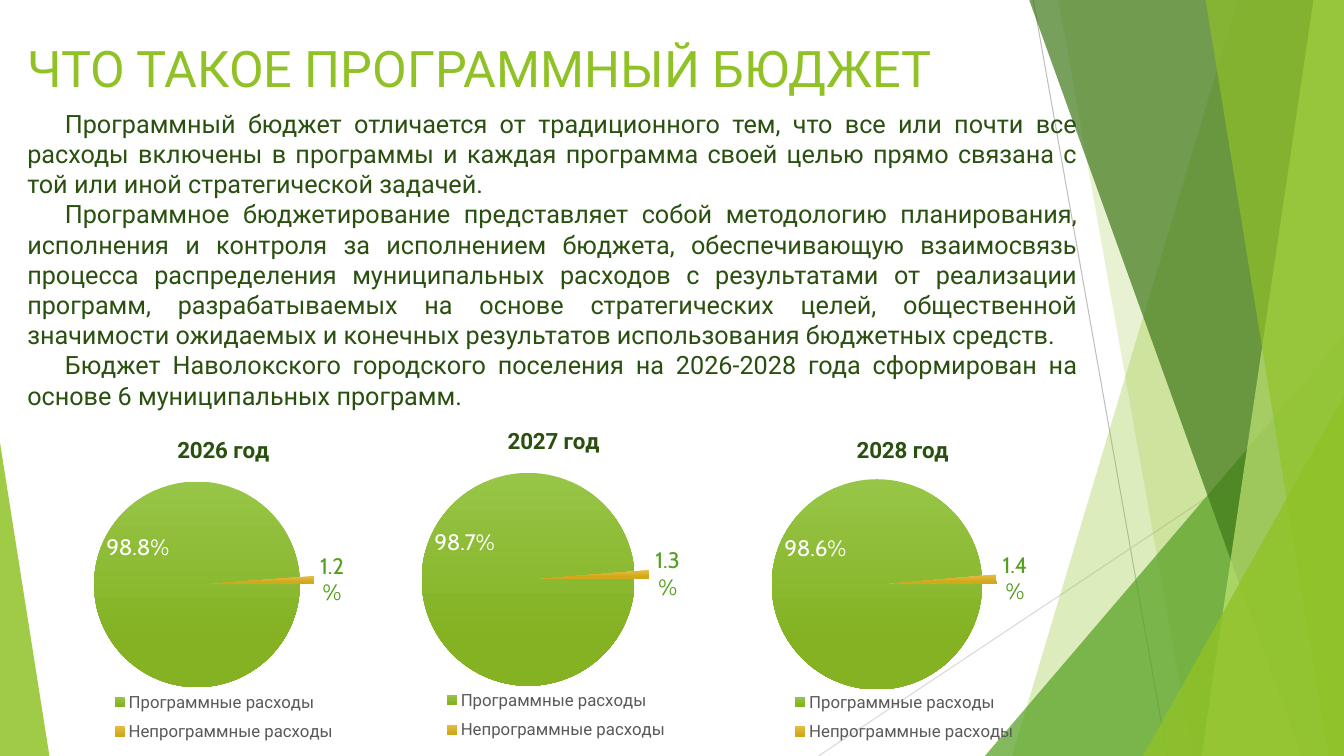
from lxml import etree
from pptx import Presentation
from pptx.chart.data import CategoryChartData
from pptx.dml.color import RGBColor
from pptx.enum.chart import XL_CHART_TYPE, XL_LABEL_POSITION, XL_LEGEND_POSITION
from pptx.enum.shapes import MSO_CONNECTOR, MSO_SHAPE
from pptx.enum.text import MSO_ANCHOR, MSO_AUTO_SIZE, PP_ALIGN
from pptx.oxml.ns import qn
from pptx.util import Inches, Pt

PIE = XL_CHART_TYPE.PIE
BOTTOM = XL_LEGEND_POSITION.BOTTOM
INSIDE, OUTSIDE = XL_LABEL_POSITION.INSIDE_END, XL_LABEL_POSITION.OUTSIDE_END
STRAIGHT = MSO_CONNECTOR.STRAIGHT
TRIANGLE = MSO_SHAPE.ISOSCELES_TRIANGLE
LEFT, JUSTIFY = PP_ALIGN.LEFT, PP_ALIGN.JUSTIFY
TOP, MIDDLE = MSO_ANCHOR.TOP, MSO_ANCHOR.MIDDLE
NO_FIT = MSO_AUTO_SIZE.NONE

LIME, GREEN, FOREST, PALE = "90C226", "54A021", "3F7819", "C0E474"
DARK, GREY, WHITE = "2A5010", "595959", "FFFFFF"
TITLE_FMT = {"name": "Roboto", "size": Pt(36), "color": LIME}
BODY_FMT = {"name": "Roboto", "size": Pt(18), "color": DARK}
CHART_TITLE_FMT = {"name": "Roboto", "size": Pt(16), "bold": True, "color": DARK}
LEGEND_FMT = {"name": "Roboto", "size": Pt(12), "color": GREY}
LABEL_FMT = {"name": "Cabin", "size": Pt(16), "bold": False}

TITLE = "ЧТО ТАКОЕ ПРОГРАММНЫЙ БЮДЖЕТ"
PARAGRAPHS = [
    "Программный бюджет отличается от традиционного тем, что все или почти все "
    "расходы включены в программы и каждая программа своей целью прямо связана с "
    "той или иной стратегической задачей.",
    "Программное бюджетирование представляет собой методологию планирования, "
    "исполнения и контроля за исполнением бюджета, обеспечивающую взаимосвязь "
    "процесса распределения муниципальных расходов с результатами от реализации "
    "программ, разрабатываемых на основе стратегических целей, общественной "
    "значимости ожидаемых и конечных результатов использования бюджетных средств.",
    "Бюджет Наволокского городского поселения на 2026-2028 года сформирован на "
    "основе 6 муниципальных программ.",
]
EXPENSES = ["Программные расходы", "Непрограммные расходы"]
# Gradient ends, label colour and label place for each kind of expense
SLICES = [("97C547", "84B223", WHITE, INSIDE), ("E7BC43", "D2A91B", GREEN, OUTSIDE)]
# Year, programme share, box in percent of the slide
YEARS = [
    ("2026 год", 0.988, (3, 55.33, 23.55, 44.4)),
    ("2027 год", 0.987, (27.23, 54.13, 24.38, 45.47)),
    ("2028 год", 0.986, (53.33, 55.33, 24.08, 44.4)),
]


def colour(value):
    return RGBColor.from_string(value)


def apply_format(font, fmt):
    for key, value in fmt.items():
        if key == "color":
            font.color.rgb = colour(value)
        else:
            setattr(font, key, value)


def set_layout(parent, after, **shares):
    """Fix a chart part by shares of the chart's size."""
    for old in parent.findall(qn("c:layout")):
        parent.remove(old)
    layout = etree.Element(qn("c:layout"))
    manual = etree.SubElement(layout, qn("c:manualLayout"))
    for key, value in shares.items():
        etree.SubElement(manual, qn("c:" + key)).set("val", str(value))
    before = parent.find(qn("c:" + after)) if after else None
    parent.insert(0 if before is None else parent.index(before) + 1, layout)


class SlideBuilder:
    """Places elements by percent of the slide's width and height."""

    def __init__(self, prs):
        self.prs = prs
        self.s = prs.slides.add_slide(prs.slide_layouts[1])

    def x(self, share):
        return round(self.prs.slide_width * share / 100)

    def y(self, share):
        return round(self.prs.slide_height * share / 100)

    def box(self, left, top, width, height):
        return self.x(left), self.y(top), self.x(width), self.y(height)

    def line(self, x1, y1, x2, y2, hex_colour):
        c = self.s.shapes.add_connector(
            STRAIGHT, self.x(x1), self.y(y1), self.x(x2), self.y(y2))
        c.line.color.rgb = colour(hex_colour)
        c.line.width = Pt(0.75)
        etree.SubElement(c._element.spPr, qn("a:effectLst"))

    def paint(self, sp, hex_colour, opacity):
        sp.shadow.inherit = False
        sp.fill.solid()
        sp.fill.fore_color.rgb = colour(hex_colour)
        sp.line.fill.background()
        clr = sp._element.spPr.find(".//" + qn("a:srgbClr"))
        etree.SubElement(clr, qn("a:alpha")).set("val", str(opacity * 1000))

    def band(self, top_x, bottom_x, hex_colour, opacity):
        """Area from a slanted edge to the right side of the slide."""
        fb = self.s.shapes.build_freeform(self.x(top_x), 0)
        fb.add_line_segments([(self.x(px), self.y(py)) for px, py in
                              ((100, 0), (100, 100), (bottom_x, 100))])
        self.paint(fb.convert_to_shape(), hex_colour, opacity)

    def triangle(self, box, apex, hex_colour, opacity):
        sp = self.s.shapes.add_shape(TRIANGLE, *self.box(*box))
        sp.adjustments[0] = apex
        self.paint(sp, hex_colour, opacity)

    def text(self, idx, box, paragraphs, fmt, align, anchor, indent=0):
        sp = self.s.placeholders[idx]
        self.s.shapes._spTree.append(sp._element)
        sp.left, sp.top, sp.width, sp.height = self.box(*box)
        tf = sp.text_frame
        tf.word_wrap, tf.auto_size, tf.vertical_anchor = True, NO_FIT, anchor
        for i, words in enumerate(paragraphs):
            p = tf.add_paragraph() if i else tf.paragraphs[0]
            p.alignment, p.space_before = align, Pt(0)
            pPr = p._p.get_or_add_pPr()
            pPr.set("marL", "0")
            pPr.set("indent", str(self.x(indent)))
            etree.SubElement(pPr, qn("a:buNone"))
            r = p.add_run()
            r.text = words
            apply_format(r.font, fmt)

    def pie(self, title, share, box):
        data = CategoryChartData(number_format="0.0%")
        data.categories = EXPENSES
        data.add_series("Расходы", (share, round(1 - share, 3)))
        chart = self.s.shapes.add_chart(PIE, *self.box(*box), data).chart
        apply_format(chart.font, LEGEND_FMT)

        # Heading
        chart.has_title = True
        r = chart.chart_title.text_frame.paragraphs[0].add_run()
        r.text = title
        apply_format(r.font, CHART_TITLE_FMT)
        set_layout(chart.chart_title._element, "tx",
                   xMode="edge", yMode="edge", x=0.42, y=0.04)

        # Legend
        chart.has_legend = True
        chart.legend.position = BOTTOM
        chart.legend.include_in_layout = False
        apply_format(chart.legend.font, LEGEND_FMT)
        set_layout(chart.legend._element, "legendPos", xMode="edge", yMode="edge",
                   x=0.22, y=0.79, w=0.72, h=0.2)

        # Slices and their labels
        plot = chart.plots[0]
        plot.vary_by_categories = True
        etree.SubElement(plot._element, qn("c:firstSliceAng")).set("val", "90")
        set_layout(plot._element.getparent(), None, layoutTarget="inner", xMode="edge",
                   yMode="edge", x=0.17, y=0.03, w=0.65, h=0.93)
        for i, (light, deep, label_colour, place) in enumerate(SLICES):
            point = plot.series[0].points[i]
            fill = point.format.fill
            fill.gradient()
            fill.gradient_angle = 270
            for stop, hex_colour, pos in zip(fill.gradient_stops, (light, deep), (0, 0.78)):
                stop.color.rgb = colour(hex_colour)
                stop.position = pos
            label = point.data_label
            apply_format(label.font, {**LABEL_FMT, "color": label_colour})
            label.position = place
        ser = plot.series[0]._element
        explosion = etree.Element(qn("c:explosion"))
        explosion.set("val", "14")
        ser.findall(qn("c:dPt"))[1].find(qn("c:spPr")).addprevious(explosion)
        set_layout(ser.find(".//" + qn("c:dLbl")), "idx", x=0.02, y=-0.12)


def main():
    prs = Presentation()
    prs.slide_width, prs.slide_height = Inches(13.33), Inches(7.5)
    slide = SlideBuilder(prs)

    # Green decoration
    slide.line(76.88, 0, 86.85, 100, "BFBFBF")
    slide.line(100, 53.73, 60.9, 100, "D9D9D9")
    slide.band(92.1, 75.3, LIME, 30)
    slide.band(78.75, 88.73, LIME, 20)
    slide.triangle((73.28, 44.4, 26.72, 55.6), 1, GREEN, 72)
    slide.band(76.58, 96.83, FOREST, 70)
    slide.band(97.73, 89.4, PALE, 70)
    slide.band(89.7, 98.85, LIME, 65)
    slide.triangle((85.05, 52.4, 14.95, 47.6), 1, LIME, 80)
    slide.triangle((0, 58.53, 3.68, 41.47), 0, LIME, 85)

    # Title and explanation
    slide.text(0, (1.28, 4.13, 70.5, 9.47), [TITLE], TITLE_FMT, LEFT, MIDDLE)
    slide.text(1, (1.28, 13.6, 79.65, 41.73), PARAGRAPHS, BODY_FMT, JUSTIFY, TOP, 2.8)

    # One pie per year
    for year in YEARS:
        slide.pie(*year)
    prs.save("out.pptx")


if __name__ == "__main__":
    main()
